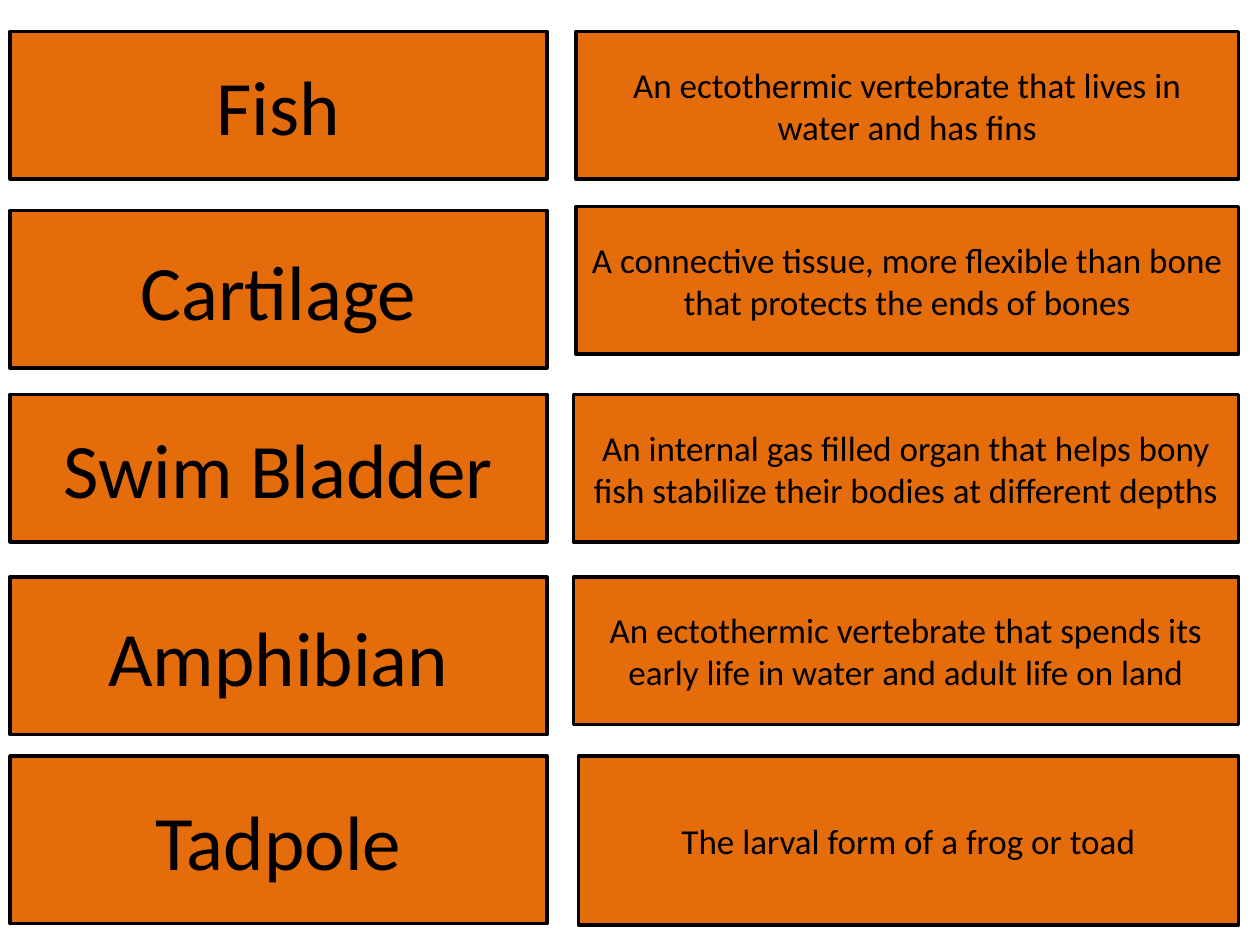
from pptx import Presentation
from pptx.dml.color import RGBColor
from pptx.enum.shapes import MSO_SHAPE as Shape
from pptx.enum.text import MSO_ANCHOR as Anchor, PP_ALIGN as Align
from pptx.util import Inches, Pt

ORANGE = RGBColor(0xE4, 0x6C, 0x0A)
BLACK = RGBColor(0, 0, 0)

TERM_LEFT, TERM_WIDTH = 0.08, 4.26
DEFINITION_RIGHT = 9.83
TERM_SIZE, DEFINITION_SIZE = 44, 20

# term, top, height, definition, left, top, height
CARDS = [
    ("Fish", 0.25, 1.17,
     "An ectothermic vertebrate that lives in water and has fins",
     4.57, 0.25, 1.17),
    ("Cartilage", 1.67, 1.25,
     "A connective tissue, more flexible than bone that protects the ends of bones",
     4.57, 1.64, 1.17),
    ("Swim Bladder", 3.13, 1.17,
     "An internal gas filled organ that helps bony fish stabilize their bodies "
     "at different depths",
     4.55, 3.13, 1.17),
    ("Amphibian", 4.58, 1.25,
     "An ectothermic vertebrate that spends its early life in water and adult "
     "life on land",
     4.55, 4.58, 1.17),
    ("Tadpole", 6, 1.33,
     "The larval form of a frog or toad",
     4.59, 6, 1.34),
]


def add_card(page, text, size, left, top, width, height):
    box = page.shapes.add_shape(
        Shape.FLOWCHART_PROCESS,
        Inches(left), Inches(top), Inches(width), Inches(height))
    box.shadow.inherit = False
    box.fill.solid()
    box.fill.fore_color.rgb = ORANGE
    box.line.color.rgb = BLACK
    box.line.width = Pt(2)
    frame = box.text_frame
    frame.word_wrap = True
    frame.vertical_anchor = Anchor.MIDDLE
    para = frame.paragraphs[0]
    para.alignment = Align.CENTER
    span = para.add_run()
    span.text = text
    span.font.name = "Calibri"
    span.font.size = Pt(size)
    span.font.color.rgb = BLACK


def main():
    deck = Presentation()
    deck.slide_width, deck.slide_height = Inches(10), Inches(7.5)
    page = deck.slides.add_slide(deck.slide_layouts[6])
    for term, term_top, term_height, definition, left, top, height in CARDS:
        add_card(page, term, TERM_SIZE,
                 TERM_LEFT, term_top, TERM_WIDTH, term_height)
        add_card(page, definition, DEFINITION_SIZE,
                 left, top, DEFINITION_RIGHT - left, height)
    deck.save("out.pptx")


if __name__ == "__main__":
    main()
